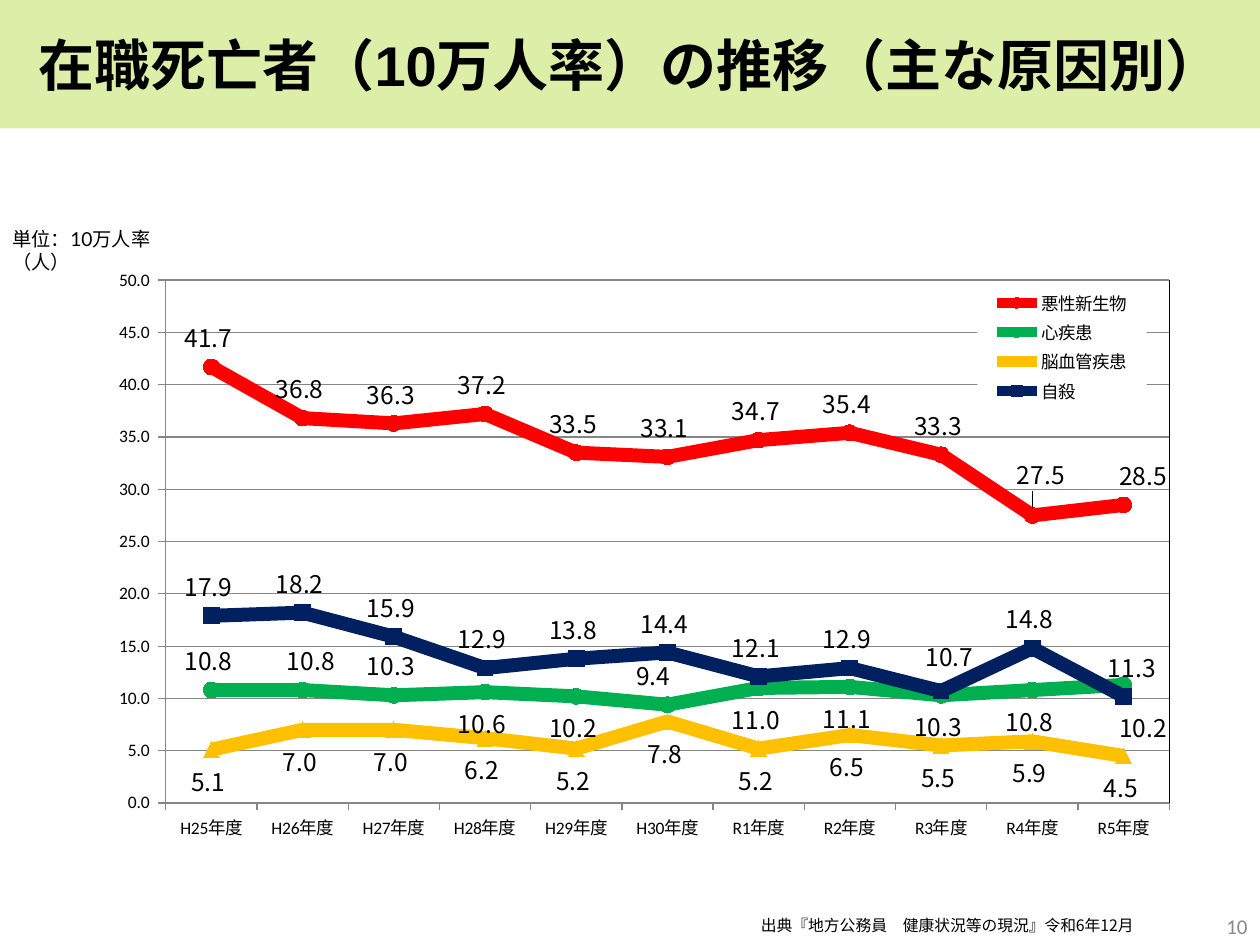
"""Build the slide on in-service death rates by main cause."""
from pptx import Presentation, oxml, util as u
from pptx.chart.data import CategoryChartData
from pptx.dml.color import RGBColor
from pptx.enum import chart as c, text as t
from pptx.oxml.ns import nsdecls


def rgb(value):
    return RGBColor.from_string(value)


def apply(target, values):
    for name, value in values.items():
        setattr(target, name, value)


presentation = Presentation()
apply(presentation, {"slide_width": u.Cm(25.4), "slide_height": u.Cm(19.05)})
slide = presentation.slides.add_slide(presentation.slide_layouts[5])

title = slide.shapes.title
apply(title, {"left": 0, "top": 0, "width": u.Cm(25.4), "height": u.Cm(2.59)})
title.fill.solid()
title.fill.fore_color.rgb = rgb("DCEEA7")
title.text_frame.text = "在職死亡者（10万人率）の推移（主な原因別）"
apply(title.text_frame, {"vertical_anchor": t.MSO_ANCHOR.MIDDLE, "word_wrap": True})
paragraph = title.text_frame.paragraphs[0]
paragraph.alignment = t.PP_ALIGN.CENTER
font = paragraph.runs[0].font
apply(font, {"size": u.Pt(32), "name": "Arial", "bold": True})
font.color.rgb = rgb("000000")

NUMBER_FORMAT = r"0.0_);[Red]\(0.0\)"
LABEL_FONT = {"size": u.Pt(14), "name": "Noto Sans CJK JP"}
ABOVE, BELOW = c.XL_LABEL_POSITION.ABOVE, c.XL_LABEL_POSITION.BELOW
CIRCLE, TRIANGLE, SQUARE = (
    c.XL_MARKER_STYLE.CIRCLE, c.XL_MARKER_STYLE.TRIANGLE, c.XL_MARKER_STYLE.SQUARE)

causes = [
    ("悪性新生物", "FF0000", CIRCLE, ABOVE,
     [41.7, 36.8, 36.3, 37.2, 33.5, 33.1, 34.7, 35.4, 33.3, 27.5, 28.5],
     {9: (ABOVE, 0.01, -0.02), 10: (ABOVE, 0.02, 0)}),
    ("心疾患", "00B050", CIRCLE, BELOW,
     [10.8, 10.8, 10.3, 10.6, 10.2, 9.4, 11.0, 11.1, 10.3, 10.8, 11.3],
     {0: (ABOVE, 0, 0), 1: (ABOVE, 0.01, 0), 2: (ABOVE, 0, 0),
      5: (ABOVE, -0.01, 0), 10: (ABOVE, 0.01, 0.02)}),
    ("脳血管疾患", "FFC000", TRIANGLE, BELOW,
     [5.1, 7.0, 7.0, 6.2, 5.2, 7.8, 5.2, 6.5, 5.5, 5.9, 4.5], {}),
    ("自殺", "002060", SQUARE, ABOVE,
     [17.9, 18.2, 15.9, 12.9, 13.8, 14.4, 12.1, 12.9, 10.7, 14.8, 10.2],
     {8: (ABOVE, 0.01, -0.01), 10: (BELOW, 0.02, 0)}),
]

chart_data = CategoryChartData(number_format=NUMBER_FORMAT)
chart_data.categories = [f"H{year}年度" for year in range(25, 31)] + [
    f"R{year}年度" for year in range(1, 6)]
for name, color, marker, position, values, moved in causes:
    chart_data.add_series(name, values)
chart = slide.shapes.add_chart(
    c.XL_CHART_TYPE.LINE_MARKERS, u.Cm(1.75), u.Cm(5.18), u.Cm(22.73), u.Cm(11.76),
    chart_data).chart
apply(chart, {"has_title": False, "has_legend": True})
apply(chart.font, {"size": u.Pt(10), "name": "Calibri"})
chart.font.color.rgb = rgb("000000")
chart.plots[0].vary_by_categories = False

LAYOUT = (
    "<c:layout %s><c:manualLayout>{modes}"
    '<c:x val="{x}"/><c:y val="{y}"/>{size}</c:manualLayout></c:layout>' % nsdecls("c"))
EDGES = '<c:xMode val="edge"/><c:yMode val="edge"/>'
SIZE = '<c:w val="{}"/><c:h val="{}"/>'

for series, (name, color, marker, position, values, moved) in zip(chart.plots[0].series, causes):
    series.smooth = False
    series.format.line.width = u.Pt(8)
    apply(series.marker, {"style": marker, "size": 9})
    series.marker.format.fill.solid()
    series.marker.format.fill.fore_color.rgb = rgb(color)
    for line in (series.format.line, series.marker.format.line):
        line.color.rgb = rgb(color)
    labels = series.data_labels
    apply(labels, {"show_value": True, "position": position,
                   "number_format": NUMBER_FORMAT, "number_format_is_linked": False})
    apply(labels.font, LABEL_FONT)
    for index, (side, x, y) in moved.items():
        label = series.points[index].data_label
        label.position = side
        apply(label.font, LABEL_FONT)
        element = series._element.xpath(f'c:dLbls/c:dLbl[c:idx/@val="{index}"]')[0]
        element.insert(1, oxml.parse_xml(
            f'<c:numFmt {nsdecls("c")} formatCode="{NUMBER_FORMAT}" sourceLinked="0"/>'))
        element.insert(1, oxml.parse_xml(LAYOUT.format(modes="", x=x, y=y, size="")))

value_axis, category_axis = chart.value_axis, chart.category_axis
apply(value_axis, {"minimum_scale": 0, "maximum_scale": 50, "major_unit": 5,
                   "has_major_gridlines": True})
apply(value_axis.tick_labels, {"number_format": NUMBER_FORMAT, "number_format_is_linked": False})
for axis in (value_axis, category_axis):
    axis.major_tick_mark = c.XL_TICK_MARK.OUTSIDE
for part in (value_axis, category_axis, value_axis.major_gridlines):
    part.format.line.color.rgb = rgb("868686")
    part.format.line.width = u.Pt(0.75)

legend = chart.legend
apply(legend, {"position": c.XL_LEGEND_POSITION.RIGHT, "include_in_layout": False})
apply(legend.font, {"size": u.Pt(10), "name": "Calibri"})
legend_element = legend._element
plot_area = chart._chartSpace.chart.plotArea
for element, place, after in (
        (legend_element, (0.79, 0.05, 0.15, 0.21), "c:legendPos"),
        (plot_area, (0.07, 0.04, 0.89, 0.9), None)):
    for old in element.xpath("c:layout"):
        element.remove(old)
    x, y, width, height = place
    modes = EDGES if after else '<c:layoutTarget val="inner"/>' + EDGES
    layout = oxml.parse_xml(LAYOUT.format(modes=modes, x=x, y=y, size=SIZE.format(width, height)))
    element.insert(1 if after else 0, layout)
legend_element.xpath("c:txPr")[0].addprevious(oxml.parse_xml(
    f'<c:spPr {nsdecls("c", "a")}><a:solidFill><a:srgbClr val="FFFFFF"/></a:solidFill></c:spPr>'))
plot_area.append(oxml.parse_xml(
    f'<c:spPr {nsdecls("c", "a")}><a:noFill/><a:ln w="9525"><a:solidFill>'
    '<a:srgbClr val="000000"/></a:solidFill></a:ln></c:spPr>'))

TOP, MIDDLE = t.MSO_ANCHOR.TOP, t.MSO_ANCHOR.MIDDLE
LEFT, RIGHT = t.PP_ALIGN.LEFT, t.PP_ALIGN.RIGHT
for content, place, size, name, color, anchor, alignment in (
        ("単位：10万人率（人）", (0, 4.45, 3.89, 0.74), 11, "Lato", "000000", TOP, LEFT),
        ("出典『地方公務員　健康状況等の現況』令和6年12月", (15.09, 18.14, 8.38, 1.02),
         9, "Noto Sans CJK JP", "000000", MIDDLE, LEFT),
        ("10", (19.48, 18.16, 5.92, 1.02), 12, "Calibri", "898989", MIDDLE, RIGHT)):
    frame = slide.shapes.add_textbox(*map(u.Cm, place)).text_frame
    apply(frame, {"text": content, "word_wrap": True, "vertical_anchor": anchor})
    paragraph = frame.paragraphs[0]
    paragraph.alignment = alignment
    font = paragraph.runs[0].font
    apply(font, {"size": u.Pt(size), "name": name})
    font.color.rgb = rgb(color)

presentation.save("out.pptx")
